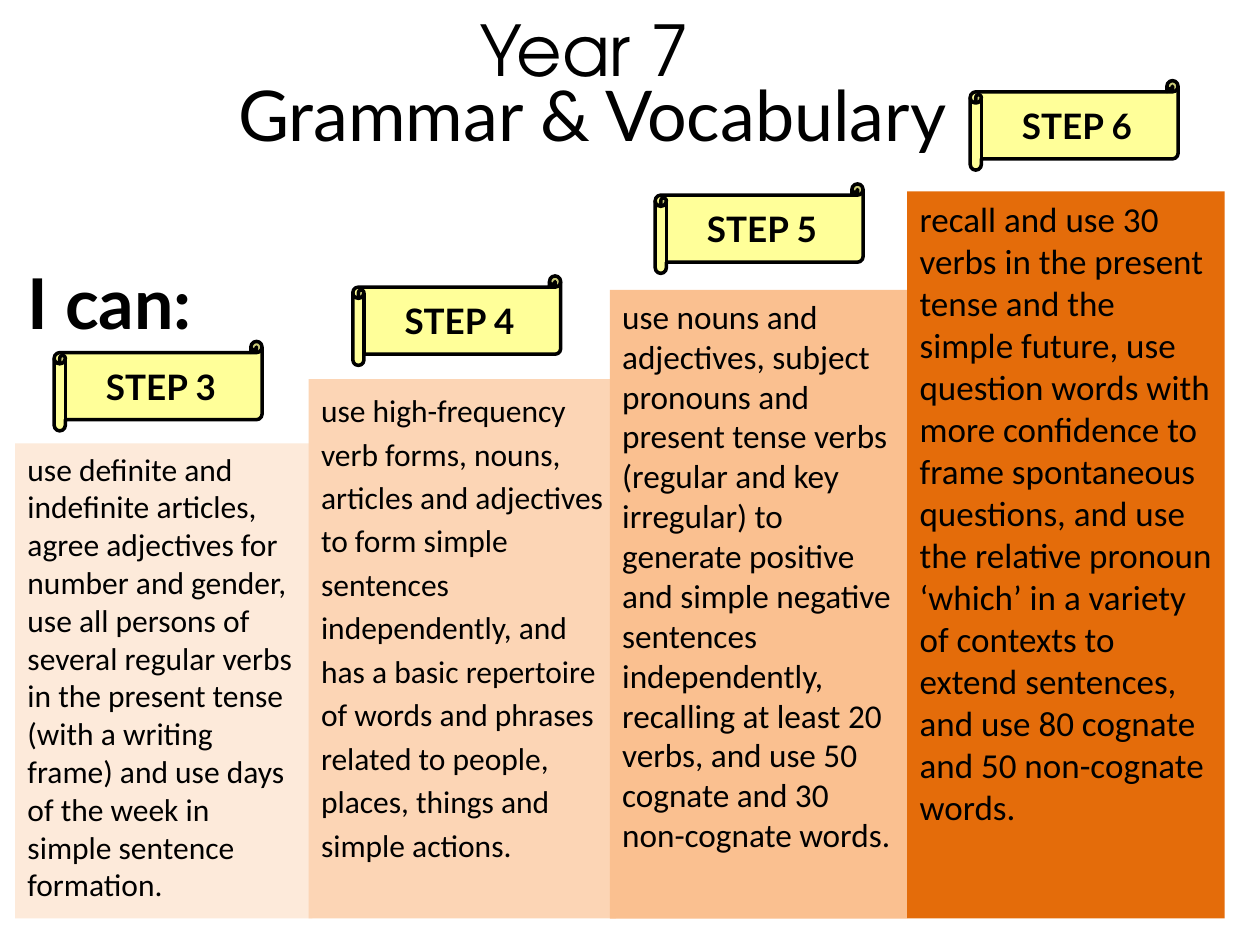
from pptx import Presentation
from pptx.dml.color import RGBColor
from pptx.enum import shapes, text
from pptx.util import Inches, Pt

COLORS = {
    "text": "000000",
    "scroll": "FFFF99",
    "step 3": "FDEADA",
    "step 4": "FCD5B5",
    "step 5": "FAC090",
    "step 6": "E46C0A",
}
COLUMN_BOTTOM = 7.29
SCROLL_SIZE = (1.65, 0.71)

# name, column (left, top, width), scroll (left, top), text size, line spacing, wording
STEPS = [
    ("STEP 3", (0.12, 3.52, 2.36), (0.43, 2.71), 18, 1,
     "use definite and indefinite articles, agree adjectives for number and "
     "gender, use all persons of several regular verbs in the present tense "
     "(with a writing frame) and use days of the week in simple sentence "
     "formation."),
    ("STEP 4", (2.45, 3.01, 2.44), (2.8, 2.19), 18, 1.15,
     "use high-frequency verb forms, nouns, articles and adjectives to form "
     "simple sentences independently, and has a basic repertoire of words and "
     "phrases related to people, places, things and simple actions."),
    ("STEP 5", (4.84, 2.3, 2.36), (5.2, 1.46), 19, 1,
     "use nouns and adjectives, subject pronouns and present tense verbs "
     "(regular and key irregular) to generate positive and simple negative "
     "sentences independently, recalling at least 20 verbs, and use 50 cognate "
     "and 30 non-cognate words."),
    ("STEP 6", (7.2, 1.52, 2.52), (7.7, 0.64), 20, 1,
     "recall and use 30 verbs in the present tense and the simple future, use "
     "question words with more confidence to frame spontaneous questions, and "
     "use the relative pronoun ‘which’ in a variety of contexts to extend "
     "sentences, and use 80 cognate and 50 non-cognate words."),
]


def color(name):
    return RGBColor.from_string(COLORS[name])


def write(shape, wording, font, size, bold=False, align=text.PP_ALIGN.LEFT,
          anchor=text.MSO_ANCHOR.TOP, spacing=None):
    frame = shape.text_frame
    frame.word_wrap = True
    frame.vertical_anchor = anchor
    paragraph = frame.paragraphs[0]
    paragraph.alignment = align
    if spacing:
        paragraph.line_spacing = spacing
    run = paragraph.add_run()
    run.text = wording
    run.font.name = font
    run.font.size = Pt(size)
    run.font.bold = bold
    run.font.color.rgb = color("text")


def add_filled(slide, kind, box, fill):
    """Add a flat preset shape without an outline."""
    shape = slide.shapes.add_shape(kind, *map(Inches, box))
    shape.shadow.inherit = False
    shape.fill.solid()
    shape.fill.fore_color.rgb = color(fill)
    shape.line.fill.background()
    return shape


def add_heading(slide):
    title = slide.shapes.title
    title.left, title.top, title.width, title.height = map(Inches, (2.24, 0, 4.8, 0.77))
    write(title, "Year 7", "TeX Gyre Adventor", 40, align=text.PP_ALIGN.CENTER)
    subtitle = slide.shapes.add_textbox(*map(Inches, (1.54, 0.52, 6.32, 0.77)))
    write(subtitle, "Grammar & Vocabulary", "Lato", 40, align=text.PP_ALIGN.CENTER)
    lead_in = slide.shapes.add_textbox(*map(Inches, (0.12, 2.01, 6.32, 0.77)))
    write(lead_in, "I can:", "Lato", 40, bold=True)


def add_column(slide, box, fill, wording, size, spacing):
    column = add_filled(slide, shapes.MSO_SHAPE.RECTANGLE, box, fill)
    write(column, wording, "Calibri", size, spacing=spacing)


def add_scroll(slide, box, name):
    scroll = add_filled(slide, shapes.MSO_SHAPE.HORIZONTAL_SCROLL, box, "scroll")
    scroll.line.color.rgb = color("text")
    scroll.line.width = Pt(2)
    write(scroll, name, "Lato", 20, bold=True, align=text.PP_ALIGN.CENTER,
          anchor=text.MSO_ANCHOR.MIDDLE)


def main():
    presentation = Presentation()
    presentation.slide_width, presentation.slide_height = Inches(10), Inches(7.5)
    slide = presentation.slides.add_slide(presentation.slide_layouts.get_by_name("Title Only"))
    add_heading(slide)
    for name, (left, top, width), corner, size, spacing, wording in STEPS:
        box = (left, top, width, COLUMN_BOTTOM - top)
        add_column(slide, box, name.lower(), wording, size, spacing)
        add_scroll(slide, corner + SCROLL_SIZE, name)
    presentation.save("out.pptx")


if __name__ == "__main__":
    main()
